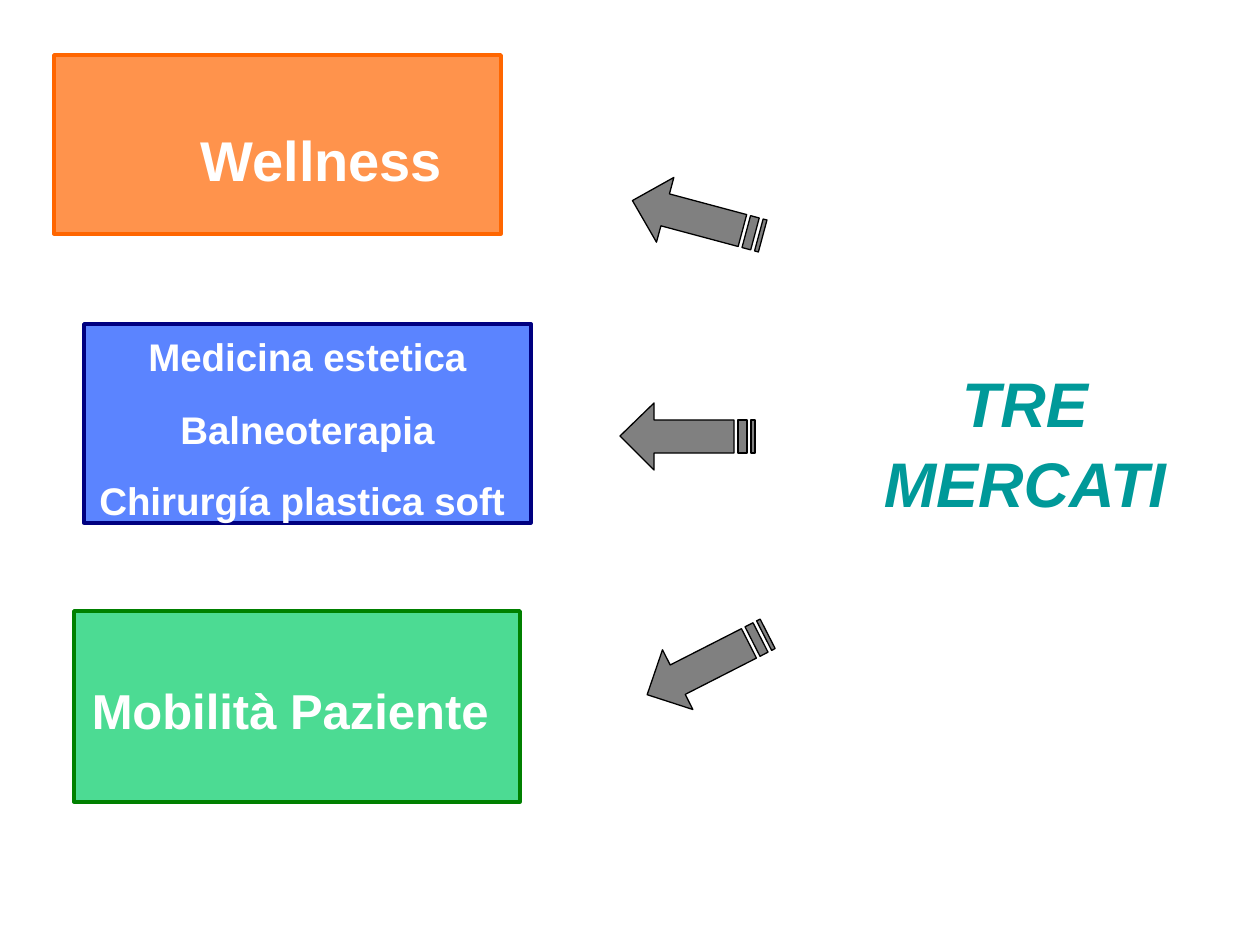
from dataclasses import dataclass

from lxml import etree
from pptx import Presentation
from pptx.dml.color import RGBColor
from pptx.enum.text import MSO_ANCHOR, PP_ALIGN
from pptx.oxml.ns import qn
from pptx.util import Pt

PX = 914400 // 126
TOP, CENTER = MSO_ANCHOR.TOP, PP_ALIGN.CENTER
RECTANGLE = 1  # MSO_SHAPE.RECTANGLE


@dataclass(frozen=True)
class Theme:
    font: str = "Arial"
    white: str = "FFFFFF"
    teal: str = "009999"
    gray: str = "808080"
    black: str = "000000"
    treatment_size: int = 22
    mobility_size: int = 28
    wellness_size: int = 32
    title_size: int = 36
    line_spacing: float = 1.06
    inset: tuple = (13, 6)


THEME = Theme()

# Boxes are left, top, width, height in px; lines are (text, space before in pt).
MARKETS = [
    dict(box=(84, 324, 447, 199), fill="3366FF", opacity=80, line="000080",
         size=THEME.treatment_size, inset_top=6,
         lines=[("Medicina estetica", 13.8), ("Balneoterapia", 13.8),
                ("Chirurgía plastica soft ", 12.5)]),
    dict(box=(54, 55, 447, 179), fill="FF6600", opacity=70, line="FF6600"),
    dict(box=(74, 611, 446, 191), fill="00CC66", opacity=70, line="008000",
         size=THEME.mobility_size, inset_top=66, lines=[("Mobilità Paziente ", 0)]),
]
WELLNESS = dict(box=(113, 115, 417, 81), lines=[("Wellness", 0)])
TITLE = dict(box=(862, 354, 326, 166), lines=[("TRE", 0), ("MERCATI", 0)])

ARROWS = [(620, 403, 180), (640, 631, 153), (630, 185, 195)]  # left, top, rotation
ARROW_PARTS = [
    [(21, 17), (101, 17), (101, 0), (135, 34), (101, 67), (101, 50), (21, 50)],
    [(8, 17), (17, 17), (17, 50), (8, 50)],
    [(0, 17), (4, 17), (4, 50), (0, 50)],
]


def rgb(color):
    return RGBColor.from_string(color)


def px(values):
    return [value * PX for value in values]


def paint(shape, fill, line, width, opacity=100):
    shape.shadow.inherit = False
    shape.fill.solid()
    shape.fill.fore_color.rgb = rgb(fill)
    if opacity < 100:
        color = shape.fill._xPr.find(qn("a:solidFill"))[0]
        etree.SubElement(color, qn("a:alpha"), val=str(opacity * 1000))
    shape.line.color.rgb = rgb(line)
    shape.line.width = Pt(width)


def write(shape, lines, size, color=THEME.white, italic=False, wrap=True,
          inset_top=THEME.inset[1]):
    frame = shape.text_frame
    frame.word_wrap = wrap
    frame.vertical_anchor = TOP
    side, bottom = px(THEME.inset)
    frame.margin_left = frame.margin_right = side
    frame.margin_top, frame.margin_bottom = inset_top * PX, bottom
    for index, (text, space_before) in enumerate(lines):
        paragraph = frame.add_paragraph() if index else frame.paragraphs[0]
        paragraph.alignment = CENTER
        paragraph.line_spacing = THEME.line_spacing
        paragraph.space_before = Pt(space_before)
        run = paragraph.add_run()
        run.text = text
        run.font.name = THEME.font
        run.font.size = Pt(size)
        run.font.bold = True
        run.font.italic = italic
        run.font.color.rgb = rgb(color)


def add_striped_arrow(shapes, left, top, rotation):
    """Draw the arrow pointing right, then turn it about its centre."""
    first, *stripes = ARROW_PARTS
    builder = shapes.build_freeform(*first[0], scale=PX)
    builder.add_line_segments(first[1:], close=True)
    for stripe in stripes:
        builder.move_to(*stripe[0])
        builder.add_line_segments(stripe[1:], close=True)
    arrow = builder.convert_to_shape(left * PX, top * PX)
    arrow.rotation = rotation
    paint(arrow, THEME.gray, THEME.black, 0.75)


def main():
    deck = Presentation()
    deck.slide_width, deck.slide_height = px((1260, 945))
    shapes = deck.slides.add_slide(deck.slide_layouts[6]).shapes

    for market in MARKETS:
        panel = shapes.add_shape(RECTANGLE, *px(market["box"]))
        paint(panel, market["fill"], market["line"], 2, market["opacity"])
        if "lines" in market:
            write(panel, market["lines"], market["size"], inset_top=market["inset_top"])

    write(shapes.add_textbox(*px(WELLNESS["box"])), WELLNESS["lines"], THEME.wellness_size)
    write(shapes.add_textbox(*px(TITLE["box"])), TITLE["lines"], THEME.title_size,
          THEME.teal, italic=True, wrap=False)
    for arrow in ARROWS:
        add_striped_arrow(shapes, *arrow)

    deck.save("out.pptx")


if __name__ == "__main__":
    main()
